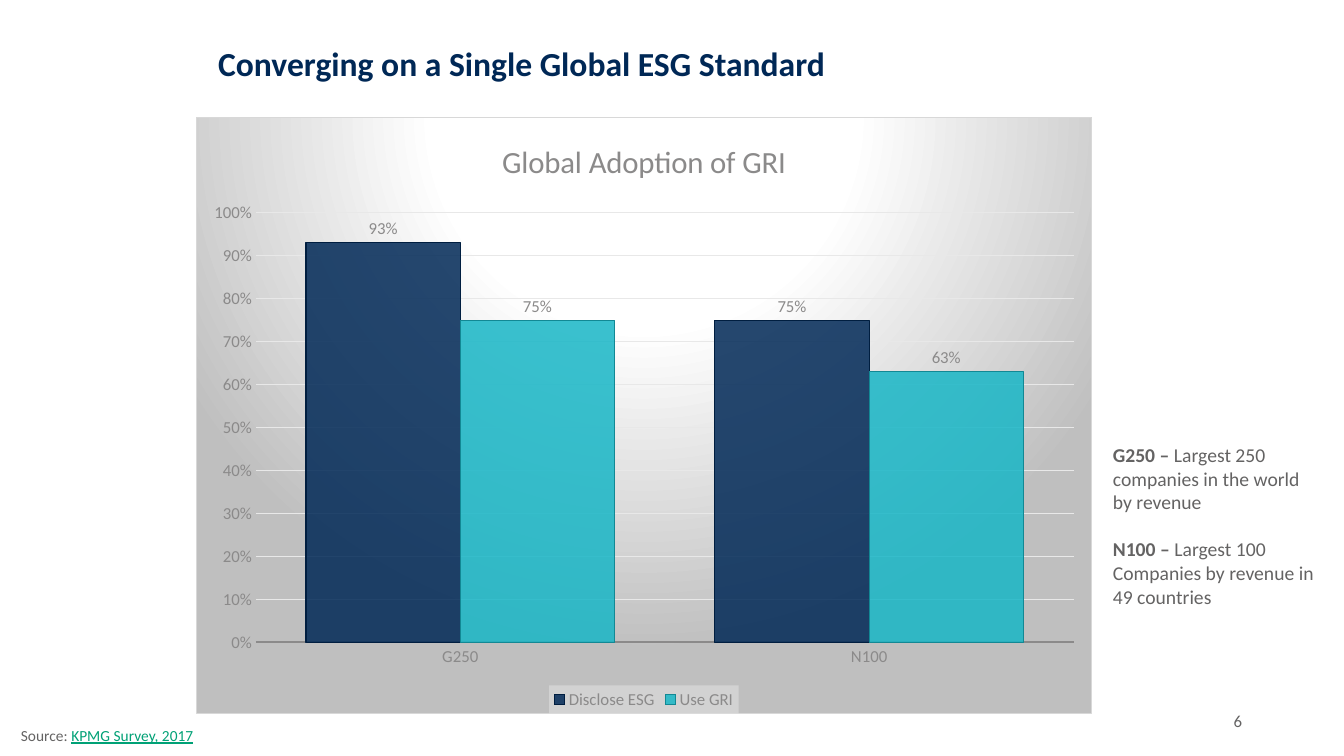
from pptx import Presentation
from pptx.chart.data import CategoryChartData
from pptx.dml.color import RGBColor
from pptx.enum.chart import XL_CHART_TYPE, XL_LABEL_POSITION, XL_LEGEND_POSITION, XL_TICK_MARK
from pptx.enum.text import MSO_ANCHOR, PP_ALIGN
from pptx.oxml import parse_xml
from pptx.oxml.ns import nsdecls, qn
from pptx.util import Pt

PX = 12192000 / 1344
HUES = {
    "navy": "002856", "edge": "001E40", "teal": "18B6C6", "rim": "128894",
    "text": "646363", "gray": "8B8A8A", "grid": "E8E8E8", "link": "00A176",
    "white": "FFFFFF", "shade": "BFBFBF", "frame": "D8D8D8", "pale": "F2F2F2",
}


def style(font, size, hue, bold=False):
    font.name, font.size, font.bold = "Calibri", Pt(size), bold
    font.color.rgb = RGBColor.from_string(HUES[hue])


def add_text(box, lines, size, anchor=MSO_ANCHOR.TOP):
    """Add a text box; each line is a list of (text, hue, bold) runs."""
    frame = slide.shapes.add_textbox(*[round(n * PX) for n in box]).text_frame
    frame.word_wrap = True
    frame.vertical_anchor = anchor
    for i, line in enumerate(lines):
        par = frame.paragraphs[0] if i == 0 else frame.add_paragraph()
        for text, hue, bold in line:
            run = par.add_run()
            run.text = text
            style(run.font, size, hue, bold)
    return frame.paragraphs


prs = Presentation()
prs.slide_width, prs.slide_height = round(1344 * PX), round(756 * PX)
slide = prs.slides.add_slide(prs.slide_layouts[5])

# Title
title = slide.shapes.title
title.left, title.top, title.width, title.height = [round(n * PX) for n in (208, 45, 994, 41)]
title.text_frame.text = "Converging on a Single Global ESG Standard"
title.text_frame.vertical_anchor = MSO_ANCHOR.MIDDLE
head = title.text_frame.paragraphs[0]
head.alignment = PP_ALIGN.LEFT
head.line_spacing = 0.9
style(head.runs[0].font, 24, "navy", True)

# Side notes, source and page number
notes = add_text((1103, 438, 230, 176), [
    [("G250 – ", "text", True), ("Largest 250", "text", False)],
    [("companies in the world by revenue", "text", False)],
    [("N100 – ", "text", True), ("Largest 100", "text", False)],
    [("Companies by revenue in 49 countries", "text", False)],
], 14)
notes[2].space_before = Pt(17)
source = add_text((11, 721, 272, 29), [
    [("Source: ", "text", False), ("KPMG Survey, 2017", "link", False)],
], 11)
source[0].runs[1].font.underline = True
page = add_text((1180, 701, 72, 40), [[("6", "text", False)]], 12, MSO_ANCHOR.MIDDLE)
page[0].alignment = PP_ALIGN.RIGHT

# Chart
data = CategoryChartData(number_format="0%")
data.categories = ["G250", "N100"]
data.add_series("Disclose ESG", (0.93, 0.75))
data.add_series("Use GRI", (0.75, 0.63))
area = [round(n * PX) for n in (196, 117, 896, 597)]
chart = slide.shapes.add_chart(XL_CHART_TYPE.COLUMN_CLUSTERED, *area, data).chart
style(chart.font, 10, "text")
chart.has_title = True
chart.chart_title.text_frame.text = "Global Adoption of GRI"
style(chart.chart_title.text_frame.paragraphs[0].runs[0].font, 22, "gray")
chart.chart_title.include_in_layout = False

chart.has_legend = True
legend = chart.legend
legend.position = XL_LEGEND_POSITION.BOTTOM
legend.include_in_layout = False
style(legend.font, 12, "gray")
legend._element.find(qn("c:txPr")).addprevious(parse_xml(
    f'<c:spPr {nsdecls("c", "a")}><a:solidFill><a:srgbClr val="{HUES["pale"]}">'
    '<a:alpha val="39000"/></a:srgbClr></a:solidFill></c:spPr>'))

for axis in (chart.category_axis, chart.value_axis):
    axis.major_tick_mark = axis.minor_tick_mark = XL_TICK_MARK.NONE
    style(axis.tick_labels.font, 12, "gray")
base = chart.category_axis.format.line
base.color.rgb = RGBColor.from_string(HUES["gray"])
base.width = Pt(1.5)
scale = chart.value_axis
scale.minimum_scale, scale.maximum_scale, scale.major_unit = 0, 1, 0.1
scale.tick_labels.number_format = "0%"
scale.tick_labels.number_format_is_linked = False
scale.format.line.fill.background()
grid = scale.major_gridlines.format.line
grid.color.rgb = RGBColor.from_string(HUES["grid"])
grid.width = Pt(0.75)

plot = chart.plots[0]
plot.gap_width, plot.overlap, plot.vary_by_categories = 65, 0, False
for bars, hue, edge in zip(plot.series, ("navy", "teal"), ("edge", "rim")):
    bars.format.fill.solid()
    bars.format.fill.fore_color.rgb = RGBColor.from_string(HUES[hue])
    color = bars._element.find(qn("c:spPr")).find(".//" + qn("a:srgbClr"))
    color.append(parse_xml(f'<a:alpha {nsdecls("a")} val="85000"/>'))
    bars.format.line.color.rgb = RGBColor.from_string(HUES[edge])
    bars.format.line.width = Pt(0.75)
    labels = bars.data_labels
    labels.show_value = True
    labels.number_format, labels.number_format_is_linked = "0%", False
    labels.position = XL_LABEL_POSITION.OUTSIDE_END
    style(labels.font, 12, "gray")

# Radial chart background
stops = "".join(
    f'<a:gs pos="{pos}000"><a:srgbClr val="{HUES[hue]}"/></a:gs>'
    for pos, hue in ((0, "white"), (39, "white"), (100, "shade")))
chart._chartSpace.find(qn("c:chart")).addnext(parse_xml(
    f'<c:spPr {nsdecls("c", "a")}><a:gradFill><a:gsLst>{stops}</a:gsLst>'
    '<a:path path="circle"><a:fillToRect l="50000" t="-80000" r="50000" b="180000"/></a:path>'
    f'</a:gradFill><a:ln w="9525"><a:solidFill><a:srgbClr val="{HUES["frame"]}"/>'
    '</a:solidFill></a:ln></c:spPr>'))

prs.save("out.pptx")
